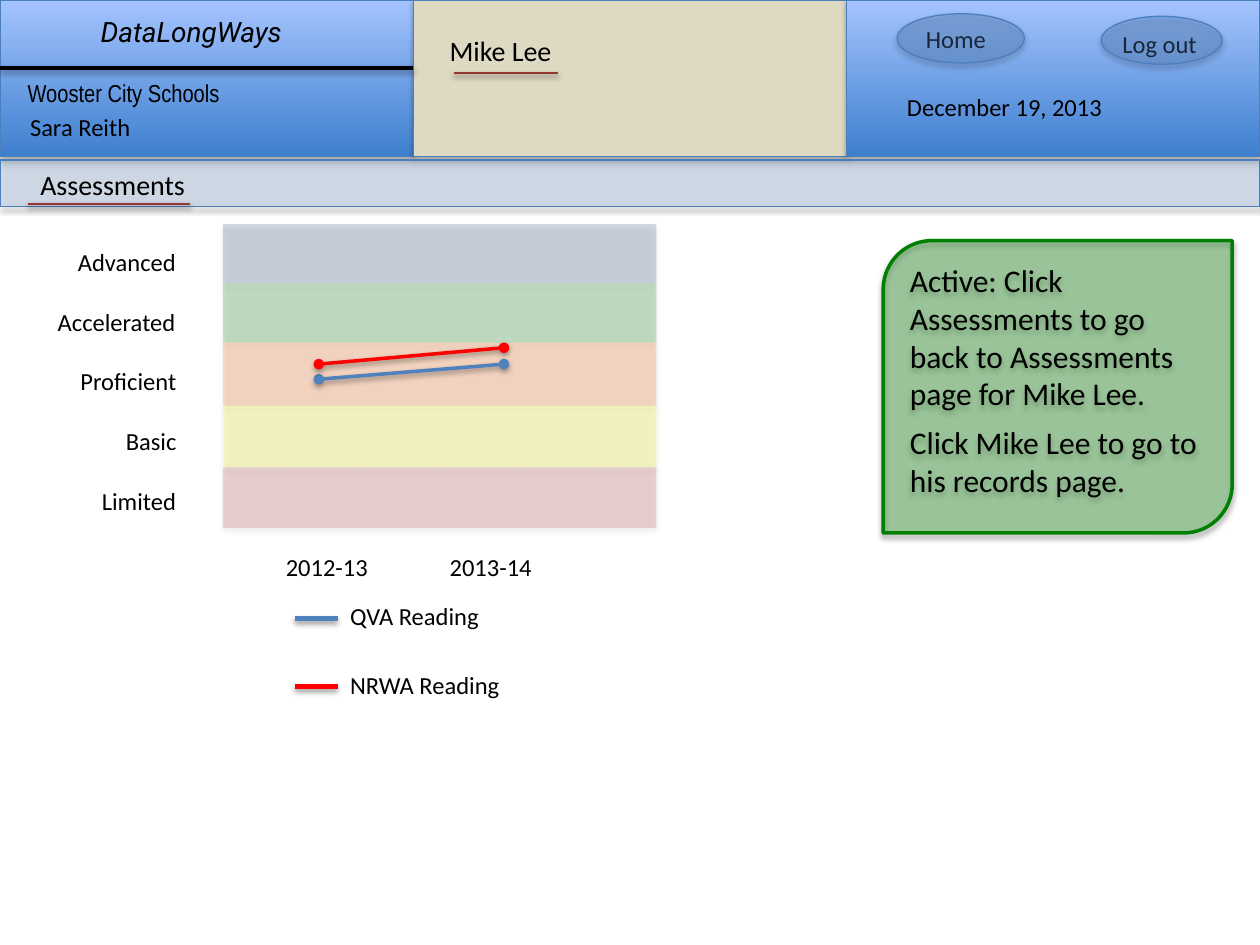
"""Build the assessments page of a school records application."""
from lxml import etree
from pptx import Presentation
from pptx.dml.color import RGBColor
from pptx.enum import shapes, text
from pptx.oxml import ns
from pptx.util import Inches, Pt

BLACK = RGBColor(0x00, 0x00, 0x00)
DEEP_BLUE = RGBColor(0x3F, 0x80, 0xCE)
PALE_BLUE = RGBColor(0xA4, 0xC4, 0xFF)
OUTLINE_BLUE = RGBColor(0x4B, 0x7E, 0xBC)
BLUE = RGBColor(0x4F, 0x81, 0xBD)
NAVY = RGBColor(0x1F, 0x49, 0x7D)
TAN = RGBColor(0xDD, 0xD9, 0xC3)
GREEN = RGBColor(0x00, 0x80, 0x00)
ORANGE = RGBColor(0xFF, 0x66, 0x00)
YELLOW = RGBColor(0xFF, 0xFF, 0x00)
BRICK = RGBColor(0xBD, 0x4B, 0x41)
MAROON = RGBColor(0x95, 0x37, 0x35)
RED = RGBColor(0xFF, 0x00, 0x00)

RECTANGLE = shapes.MSO_SHAPE.RECTANGLE
OVAL = shapes.MSO_SHAPE.OVAL
ROUNDED_DIAGONAL = shapes.MSO_SHAPE.ROUND_2_DIAG_RECTANGLE


class Page:
    """Hold the page style and draw each kind of element on the slide."""

    def __init__(self, slide, font="Calibri"):
        self.slide = slide
        self.font = font

    def shadow(self, properties, distance, opacity):
        effects = etree.SubElement(properties, ns.qn("a:effectLst"))
        outer = etree.SubElement(effects, ns.qn("a:outerShdw"), blurRad="40000",
                                 dist=str(distance), dir="5400000", rotWithShape="0")
        color = etree.SubElement(outer, ns.qn("a:srgbClr"), val="000000")
        etree.SubElement(color, ns.qn("a:alpha"), val=str(opacity * 1000))

    def style(self, paragraph, size, font=None, italic=False):
        paragraph.alignment = text.PP_ALIGN.LEFT
        paragraph.font.name = font or self.font
        paragraph.font.size = Pt(size)
        paragraph.font.italic = italic
        paragraph.font.color.rgb = BLACK

    def panel(self, kind, left, top, width, height, color=None, opacity=100,
              outline=OUTLINE_BLUE, weight=0.75):
        shape = self.slide.shapes.add_shape(
            kind, Inches(left), Inches(top), Inches(width), Inches(height))
        if color is None:
            shape.fill.gradient()
            shape.fill.gradient_angle = 90
            for stop, shade in zip(shape.fill.gradient_stops, (DEEP_BLUE, PALE_BLUE)):
                stop.color.rgb = shade
        else:
            shape.fill.solid()
            shape.fill.fore_color.rgb = color
        if opacity < 100:
            fill_color = shape._element.spPr.find(ns.qn("a:solidFill"))[0]
            etree.SubElement(fill_color, ns.qn("a:alpha"), val=str(opacity * 1000))
        if outline is None:
            shape.line.fill.background()
        else:
            shape.line.color.rgb = outline
            shape.line.width = Pt(weight)
        self.shadow(shape._element.spPr, 23000, 35)
        return shape

    def label(self, words, left, top, width, height=0.34, size=14, font=None,
              italic=False, wrap=True):
        box = self.slide.shapes.add_textbox(
            Inches(left), Inches(top), Inches(width), Inches(height))
        box.text_frame.word_wrap = wrap
        paragraph = box.text_frame.paragraphs[0]
        paragraph.text = words
        self.style(paragraph, size, font, italic)

    def title(self, words, left, top, width, height):
        title = self.slide.shapes.title
        self.slide.shapes._spTree.append(title._element)
        title.left, title.top = Inches(left), Inches(top)
        title.width, title.height = Inches(width), Inches(height)
        title.text_frame.text = words
        title.text_frame.auto_size = text.MSO_AUTO_SIZE.NONE
        title.text_frame.vertical_anchor = text.MSO_ANCHOR.TOP
        self.style(title.text_frame.paragraphs[0], 16)

    def line(self, start, end, color, weight, dots=False):
        connector = self.slide.shapes.add_connector(
            shapes.MSO_CONNECTOR.STRAIGHT, *map(Inches, start + end))
        connector.line.color.rgb = color
        connector.line.width = Pt(weight)
        if dots:
            outline = connector.line._get_or_add_ln()
            for name in ("a:headEnd", "a:tailEnd"):
                etree.SubElement(outline, ns.qn(name), type="oval")
        self.shadow(connector._element.spPr, 20000, 38)

    def note(self, sentences, left, top, width, height):
        shape = self.panel(ROUNDED_DIAGONAL, left, top, width, height, GREEN, 32, GREEN, 2)
        frame = shape.text_frame
        frame.word_wrap = True
        frame.vertical_anchor = text.MSO_ANCHOR.TOP
        frame.text = "\n".join(sentences)
        for paragraph in frame.paragraphs:
            self.style(paragraph, 18)
            paragraph.space_after = Pt(6)


def draw_header(page):
    """Draw the banner with the user, the student and the buttons."""
    page.panel(RECTANGLE, 0, 0, 3.28, 1.24)
    page.panel(RECTANGLE, 3.28, 0, 3.44, 1.24, TAN)
    page.panel(RECTANGLE, 6.72, 0, 3.28, 1.24)
    page.label("Sara Reith", 0.14, 0.84, 1.37)
    page.label("December 19, 2013", 7.1, 0.68, 1.87)
    page.label("Log out", 8.81, 0.18, 0.9)
    page.panel(OVAL, 8.74, 0.13, 0.96, 0.38, BLUE, 30)
    page.label("Home", 7.25, 0.14, 0.78)
    page.panel(OVAL, 7.12, 0.11, 1.01, 0.39, BLUE, 30)
    page.label("Wooster City Schools", 0.12, 0.57, 1.89, font="Arial Narrow")
    page.label("DataLongWays", 0.7, 0.07, 1.89, 0.37, 16, "Roboto", True)
    page.line((0, 0.54), (3.28, 0.54), BLACK, 2)
    page.panel(RECTANGLE, 0, 1.27, 10, 0.37, BLUE, 20)
    page.title("Assessments", 0.22, 1.28, 1.95, 0.37)
    page.label("Mike Lee", 3.47, 0.22, 1.33, 0.37, 16)
    page.line((3.6, 0.58), (4.43, 0.58), MAROON, 1.5)
    page.line((0.22, 1.62), (1.51, 1.62), MAROON, 1.5)


def draw_progress(page):
    """Draw the achievement bands, the two score lines and their legend."""
    levels = [("Advanced", 0.99, NAVY, 1.78), ("Accelerated", 1.15, GREEN, 2.25),
              ("Proficient", 0.97, ORANGE, 2.72), ("Basic", 0.61, YELLOW, 3.22),
              ("Limited", 0.8, BRICK, 3.71)]
    bottoms = [level[3] for level in levels[1:]] + [4.19]
    for index, ((name, width, color, top), bottom) in enumerate(zip(levels, bottoms)):
        page.panel(RECTANGLE, 1.77, top, 3.44, bottom - top, color, 20, None)
        page.label(name, 1.51 - width, 1.91 + 0.475 * index, width, wrap=False)
    for year, left in (("2012-13", 2.17), ("2013-14", 3.47)):
        page.label(year, left, 4.33, 0.86, wrap=False)
    tests = [("QVA Reading", 1.25, BLUE, 3.01, 2.89, 4.91, 4.72),
             ("NRWA Reading", 1.4, RED, 2.89, 2.76, 5.45, 5.27)]
    for name, width, color, first, second, key, top in tests:
        page.line((2.53, first), (4, second), color, 2, dots=True)
        page.line((2.34, key), (2.68, key), color, 3)
        page.label(name, 2.68, top, width, wrap=False)


def main():
    """Create the presentation and save it."""
    presentation = Presentation()
    presentation.slide_width, presentation.slide_height = Inches(10), Inches(7.5)
    page = Page(presentation.slides.add_slide(presentation.slide_layouts[5]))
    draw_header(page)
    page.note(["Active: Click Assessments to go back to Assessments page for Mike Lee.",
               "Click Mike Lee to go to his records page."], 7.01, 1.91, 2.77, 2.32)
    draw_progress(page)
    presentation.save("out.pptx")


if __name__ == "__main__":
    main()
